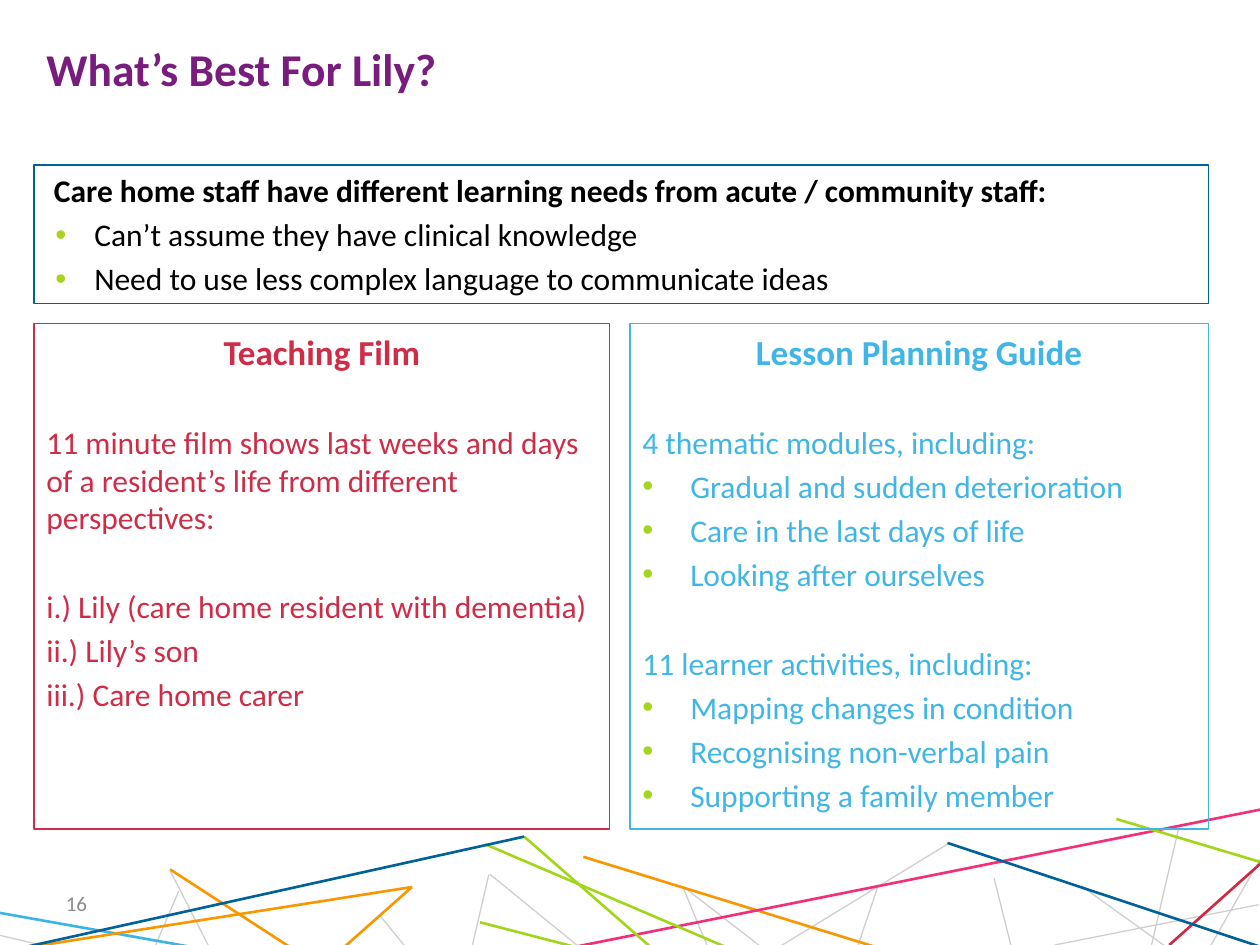
from lxml import etree
from pptx import Presentation
from pptx.dml.color import RGBColor
from pptx.enum.shapes import MSO_CONNECTOR, MSO_SHAPE
from pptx.enum.text import MSO_ANCHOR, PP_ALIGN
from pptx.oxml.ns import qn
from pptx.util import Inches, Pt

STRAIGHT = MSO_CONNECTOR.STRAIGHT
RECTANGLE = MSO_SHAPE.RECTANGLE
TOP, MIDDLE = MSO_ANCHOR.TOP, MSO_ANCHOR.MIDDLE
LEFT, CENTER, RIGHT = PP_ALIGN.LEFT, PP_ALIGN.CENTER, PP_ALIGN.RIGHT

BLACK = RGBColor(0x00, 0x00, 0x00)
PURPLE = RGBColor(0x78, 0x1D, 0x7D)
RED = RGBColor(0xCF, 0x2D, 0x47)
SKY = RGBColor(0x41, 0xB6, 0xE6)
NAVY = RGBColor(0x00, 0x62, 0x98)
BULLET_GREEN = RGBColor(0xA4, 0xD6, 0x20)
NUMBER_GREY = RGBColor(0x8C, 0x8C, 0x8C)
LINE_GREY = RGBColor(0xD0, 0xCF, 0xCF)
LINE_SKY = RGBColor(0x3C, 0xB4, 0xE5)
LINE_ORANGE = RGBColor(0xF9, 0x96, 0x00)
LINE_PINK = RGBColor(0xF3, 0x2F, 0x79)
LINE_GREEN = RGBColor(0xA2, 0xD6, 0x1B)
LINE_RED = RGBColor(0xCE, 0x28, 0x43)

FONT = "Calibri"
BODY_SIZE = 18
SPACING = 0.2 * BODY_SIZE
SECTION_GAP = 29


def add_paragraph(box, text, color, size=BODY_SIZE, bold=False, align=LEFT,
                  before=SPACING, margin=0, indent=0, bullet=False):
    """Append a paragraph, using the box's empty first one if it is free."""
    frame = box.text_frame
    para = frame.paragraphs[0]
    if para.runs:
        para = frame.add_paragraph()
        para.space_before = Pt(before)
    para.alignment = align
    span = para.add_run()
    span.text = text
    span.font.name = FONT
    span.font.size = Pt(size)
    span.font.bold = bold
    span.font.color.rgb = color
    properties = para._p.get_or_add_pPr()
    properties.set("marL", str(Inches(margin)))
    properties.set("indent", str(Inches(indent)))
    if bullet:
        bullet_color = etree.SubElement(properties, qn("a:buClr"))
        etree.SubElement(bullet_color, qn("a:srgbClr"), val=str(BULLET_GREEN))
        etree.SubElement(properties, qn("a:buFont"), typeface="Arial")
        etree.SubElement(properties, qn("a:buChar"), char="•")


def add_box(left, top, width, height, outline=None, anchor=TOP):
    place = [Inches(value) for value in (left, top, width, height)]
    if outline is None:
        box = page.shapes.add_textbox(*place)
    else:
        box = page.shapes.add_shape(RECTANGLE, *place)
        box.shadow.inherit = False
        box.fill.background()
        box.line.color.rgb = outline
        box.line.width = Pt(0.75)
    box.text_frame.word_wrap = True
    box.text_frame.vertical_anchor = anchor
    return box


deck = Presentation()
deck.slide_width = Inches(10)
deck.slide_height = Inches(7.5)
page = deck.slides.add_slide(deck.slide_layouts[6])

# Web of lines along the foot, from back to front
web = [
    (LINE_GREY, 0.75, [
        (9.36, 6.55, 9.13, 7.54), (5.44, 7.05, 6.37, 7.77),
        (5.42, 7.04, 5.75, 7.84), (6.97, 7.03, 6.76, 7.65),
        (7.52, 6.7, 5.98, 7.64), (9.99, 7.18, 8.37, 7.5),
        (10, 6.82, 9.59, 7.54), (8.58, 7.03, 9.61, 7.77),
        (-0.74, 7.25, 1.05, 7.67), (1.42, 7.07, 1.09, 7.84),
        (1.35, 6.91, 1.79, 7.77), (3.01, 7.26, 3.41, 7.75),
        (3.89, 6.94, 4.97, 7.82), (3.88, 6.94, 3.65, 7.93)]),
    (LINE_SKY, 1.5, [(-0.2, 7.21, 2.95, 7.77)]),
    (LINE_ORANGE, 1.5, [
        (1.35, 6.9, 2.8, 7.84), (3.27, 7.04, -1.25, 7.75),
        (3.27, 7.04, 2.48, 7.74), (4.63, 6.8, 7.74, 7.76)]),
    (LINE_PINK, 1.5, [(10.28, 6.37, 3.29, 7.77)]),
    (LINE_GREEN, 1.5, [
        (4.16, 6.64, 5.42, 7.74), (3.81, 7.32, 5.43, 7.74),
        (10.2, 6.9, 8.86, 6.5)]),
    (LINE_GREY, 0.75, [(7.89, 6.97, 8.08, 7.73)]),
    (LINE_RED, 1.5, [(10.02, 6.84, 9.28, 7.5)]),
    (NAVY, 1.5, [(7.52, 6.69, 10.05, 7.53)]),
    (LINE_GREEN, 1.5, [(3.85, 6.7, 5.84, 7.55)]),
    (NAVY, 1.5, [(4.16, 6.64, -0.81, 7.74)]),
]
for color, weight, strands in web:
    for strand in strands:
        line = page.shapes.add_connector(
            STRAIGHT, *[Inches(value) for value in strand])
        line.line.color.rgb = color
        line.line.width = Pt(weight)
        etree.SubElement(line._element.spPr, qn("a:effectLst"))

page_number = add_box(0.16, 6.97, 0.63, 0.4, anchor=MIDDLE)
add_paragraph(page_number, "16", NUMBER_GREY, size=12, align=RIGHT)

# Two columns: each section is a lead line, its items, and whether they are bulleted
columns = [
    (0.27, 4.57, RED, "Teaching Film", [
        ("11 minute film shows last weeks and days of a resident’s life "
         "from different perspectives:", [], False),
        ("i.) Lily (care home resident with dementia)",
         ["ii.) Lily’s son", "iii.) Care home carer"], False)]),
    (5, 4.59, SKY, "Lesson Planning Guide", [
        ("4 thematic modules, including:",
         ["Gradual and sudden deterioration",
          "Care in the last days of life",
          "Looking after ourselves"], True),
        ("11 learner activities, including:",
         ["Mapping changes in condition",
          "Recognising non-verbal pain",
          "Supporting a family member"], True)]),
]
for left, width, color, heading, sections in columns:
    column = add_box(left, 2.57, width, 4.01, outline=color)
    add_paragraph(column, heading, color, size=20, bold=True, align=CENTER)
    for lead, items, bulleted in sections:
        add_paragraph(column, lead, color, before=SECTION_GAP)
        hang = 0.38 if bulleted else 0
        for item in items:
            add_paragraph(column, item, color, margin=hang, indent=-hang,
                          bullet=bulleted)

title = add_box(0.27, 0.28, 7.48, 0.63)
add_paragraph(title, "What’s Best For Lily?", PURPLE, size=26, bold=True)

needs = add_box(0.27, 1.31, 9.32, 1.1, outline=NAVY)
add_paragraph(
    needs,
    "Care home staff have different learning needs from acute / community staff:",
    BLACK, bold=True, margin=0.06)
for need in ("Can’t assume they have clinical knowledge",
             "Need to use less complex language to communicate ideas"):
    add_paragraph(needs, need, BLACK, margin=0.38, indent=-0.31, bullet=True)

deck.save("out.pptx")
